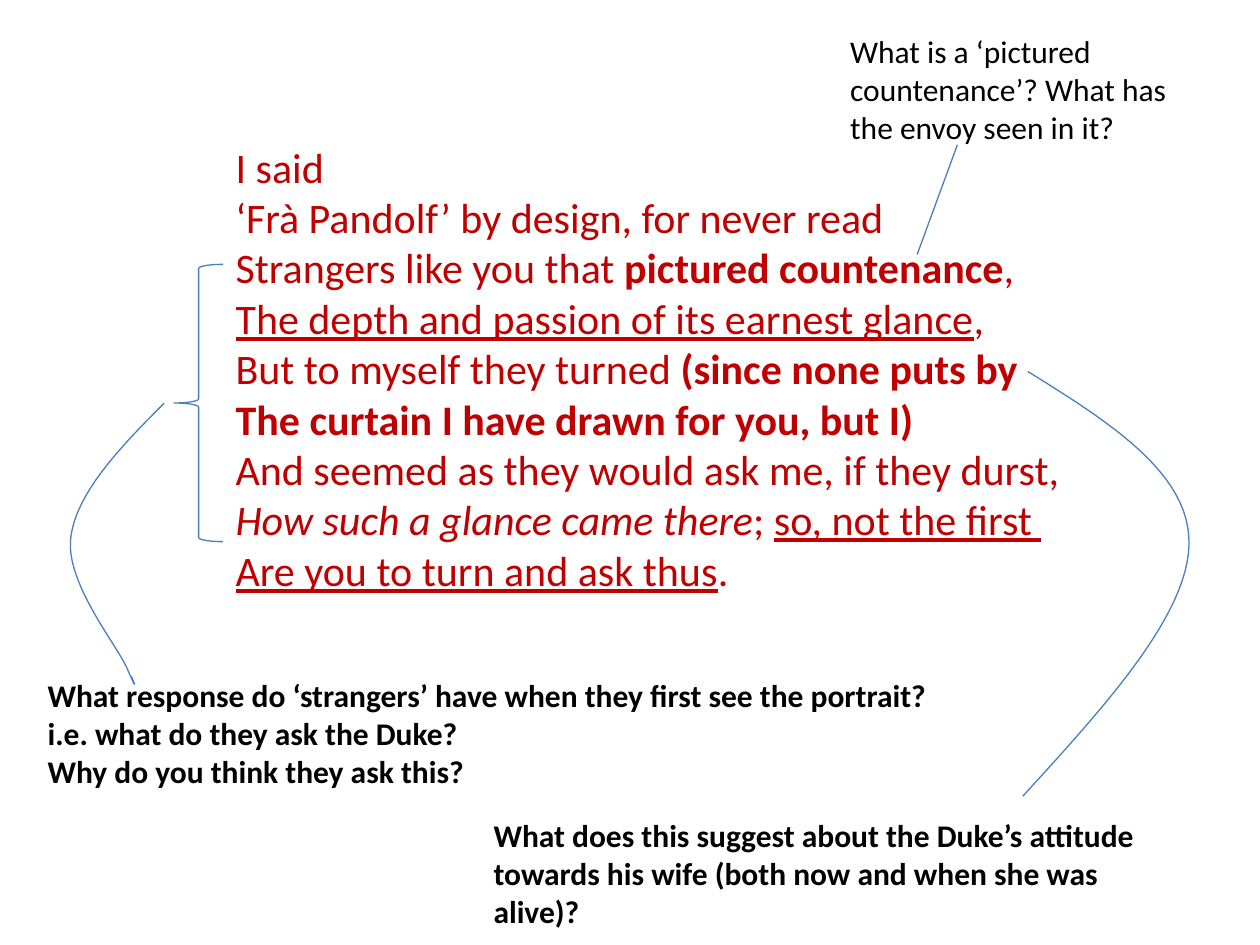
from collections import namedtuple
from dataclasses import dataclass

from lxml import etree
from pptx import Presentation
from pptx import util as u
from pptx.dml.color import RGBColor
from pptx.enum import shapes, text
from pptx.oxml import ns

Box = namedtuple("Box", "left top width height")


@dataclass(frozen=True)
class Theme:
    font: str = "Calibri"
    paper: RGBColor = RGBColor(0xFF, 0xFF, 0xFF)
    verse: RGBColor = RGBColor(0xC0, 0x00, 0x00)
    ink: RGBColor = RGBColor(0, 0, 0)
    stroke: RGBColor = RGBColor(0x4B, 0x7E, 0xBC)
    verse_size: int = 24
    note_size: int = 18
    stroke_width: float = 0.75


THEME = Theme()
BOLD, ITALIC, UNDERLINE = {"bold": True}, {"italic": True}, {"underline": True}

# Each verse line is a list of (words, format) pieces.
POEM = [
    [("I said", {})],
    [("‘Frà Pandolf’ by design, for never read", {})],
    [("Strangers like you that ", {}), ("pictured countenance", BOLD), (",", {})],
    [("The depth and passion of its earnest glance", UNDERLINE), (",", {})],
    [("But to myself they turned ", {}), ("(since none puts by", BOLD)],
    [("The curtain I have drawn for you, but I)", BOLD)],
    [("And seemed as they would ask me, if they durst,", {})],
    [("How such a glance came there", ITALIC), ("; ", {}),
     ("so, not the ﬁrst ", UNDERLINE)],
    [("Are you to turn and ask thus", UNDERLINE), (".", {})],
]


def cm(box):
    return [u.Cm(value) for value in box]


def add_run(paragraph, words, *, size, color, bold=False, italic=False, underline=False):
    run = paragraph.add_run()
    run.text = words
    font = run.font
    font.name, font.size, font.color.rgb = THEME.font, u.Pt(size), color
    font.bold, font.italic, font.underline = bold, italic, underline


def write(frame, lines, **base):
    """Fill a text frame with one paragraph per line of (words, format) pieces."""
    frame.word_wrap = True
    frame.vertical_anchor = text.MSO_ANCHOR.TOP
    for index, pieces in enumerate(lines):
        paragraph = frame.paragraphs[0] if index == 0 else frame.add_paragraph()
        paragraph.alignment = text.PP_ALIGN.LEFT
        for words, emphasis in pieces:
            add_run(paragraph, words, **{**base, **emphasis})


def style_stroke(shape):
    shape.line.color.rgb = THEME.stroke
    shape.line.width = u.Pt(THEME.stroke_width)


def add_poem(slide, box):
    panel = slide.shapes.add_shape(shapes.MSO_SHAPE.RECTANGLE, *cm(box))
    panel.shadow.inherit = False
    panel.fill.solid()
    panel.fill.fore_color.rgb = THEME.paper
    panel.line.fill.background()
    write(panel.text_frame, POEM, size=THEME.verse_size, color=THEME.verse)
    panel.text_frame.paragraphs[-1].space_after = u.Pt(10)


def add_question(slide, box, *lines, bold=True):
    note = slide.shapes.add_textbox(*cm(box))
    write(note.text_frame, [[(line, {})] for line in lines],
          size=THEME.note_size, color=THEME.ink, bold=bold)
    note.text_frame.auto_size = text.MSO_AUTO_SIZE.SHAPE_TO_FIT_TEXT


def add_pointer(slide, box):
    """Draw a straight line from the lower left to the upper right of the box."""
    left, top, width, height = cm(box)
    pointer = slide.shapes.add_connector(
        shapes.MSO_CONNECTOR.STRAIGHT, left, top + height, left + width, top)
    style_stroke(pointer)
    etree.SubElement(pointer._element.spPr, ns.qn("a:effectLst"))


def add_brace(slide, box):
    brace = slide.shapes.add_shape(shapes.MSO_SHAPE.LEFT_BRACE, *cm(box))
    brace.shadow.inherit = False
    brace.fill.background()
    style_stroke(brace)


def bezier(start, control_1, control_2, end, steps=24):
    """Return points along a cubic curve, without its start."""
    points = []
    for step in range(1, steps + 1):
        t = step / steps
        weights = ((1 - t) ** 3, 3 * t * (1 - t) ** 2, 3 * t * t * (1 - t), t ** 3)
        points.append(tuple(
            sum(weight * value for weight, value in zip(weights, axis))
            for axis in zip(start, control_1, control_2, end)))
    return points


def add_curve(slide, left, top, knots):
    """Draw joined cubic curves; knots are in cm from the given corner."""
    points = [knots[0]]
    for index in range(0, len(knots) - 1, 3):
        points += bezier(*knots[index:index + 4])
    placed = [(u.Cm(left + x), u.Cm(top + y)) for x, y in points]
    builder = slide.shapes.build_freeform(*placed[0])
    builder.add_line_segments(placed[1:], close=False)
    curve = builder.convert_to_shape()
    curve.shadow.inherit = False
    curve.fill.background()
    style_stroke(curve)


def main():
    presentation = Presentation()
    presentation.slide_width, presentation.slide_height = u.Cm(25.4), u.Cm(19.05)
    slide = presentation.slides.add_slide(presentation.slide_layouts[6])

    add_poem(slide, Box(4.5, 2.72, 21.41, 11.86))
    add_pointer(slide, Box(18.49, 2.92, 0.81, 2.21))
    add_question(slide, Box(16.89, 0.53, 7.01, 2.57),
                 "What is a ‘pictured countenance’? What has the envoy seen in it?",
                 bold=False)
    add_question(slide, Box(0.71, 13.51, 20.19, 2.57),
                 "What response do ‘strangers’ have when they first see the portrait?",
                 "i.e. what do they ask the Duke?",
                 "Why do you think they ask this?")
    add_brace(slide, Box(3.51, 5.33, 0.99, 5.59))
    add_curve(slide, 1.3, 8.13, [
        (2.01, 0), (1.12, 0.89), (0.25, 1.8), (0.13, 2.69),
        (0, 3.61), (1.07, 4.88), (1.27, 5.36),
        (1.47, 5.82), (1.42, 5.66), (1.35, 5.51)])
    add_curve(slide, 20.62, 7.49, [
        (0.1, 0), (1.75, 1.02), (3.38, 2.06), (3.35, 3.48),
        (3.33, 4.9), (1.68, 6.73), (0, 8.56)])
    add_question(slide, Box(9.7, 16.33, 13.59, 2.57),
                 "What does this suggest about the Duke’s attitude towards his wife "
                 "(both now and when she was alive)?")

    presentation.save("out.pptx")


if __name__ == "__main__":
    main()
